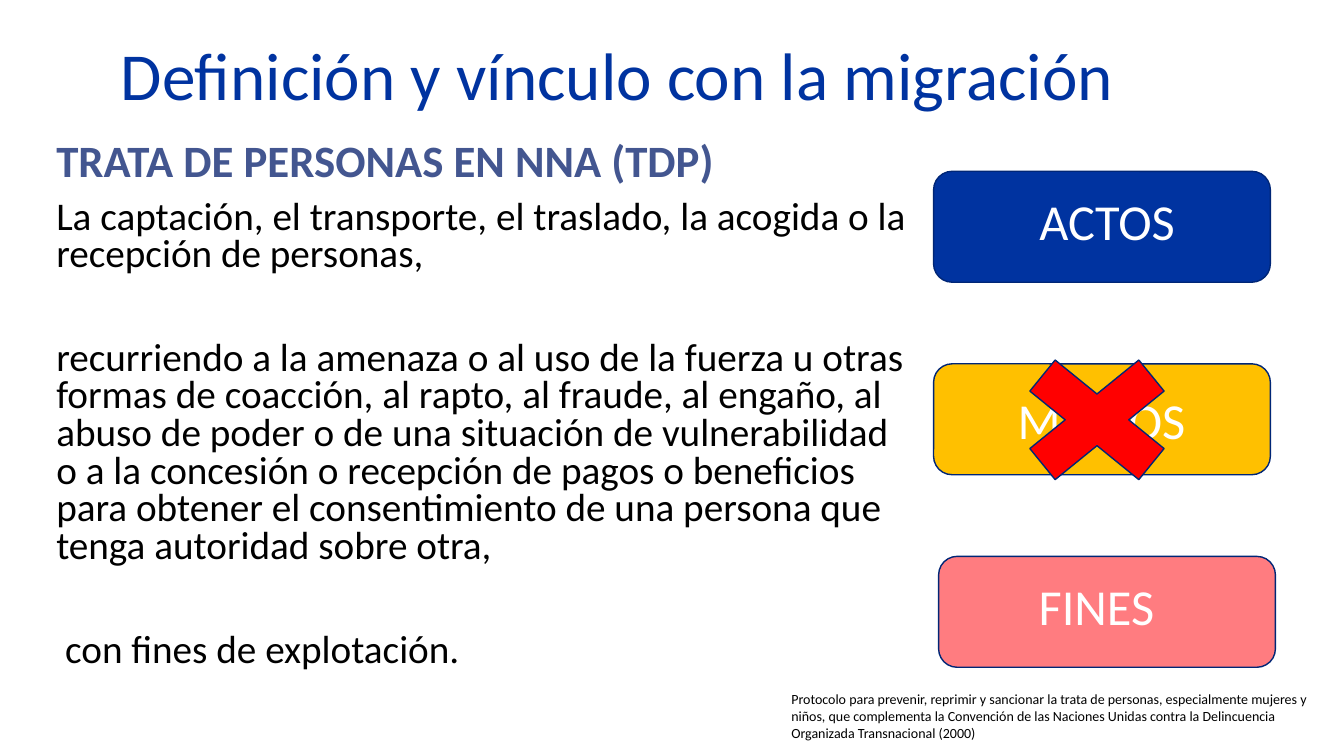
from dataclasses import dataclass

import pptx
import pptx.dml.color
import pptx.enum.shapes
import pptx.enum.text
import pptx.presentation
import pptx.shapes.autoshape
import pptx.slide
import pptx.util

Inches = pptx.util.Inches
Pt = pptx.util.Pt
RGBColor = pptx.dml.color.RGBColor
Shape = pptx.enum.shapes.MSO_SHAPE
Align = pptx.enum.text.PP_ALIGN
Anchor = pptx.enum.text.MSO_ANCHOR

FONT = "Calibri"
BLUE = RGBColor(0x00, 0x33, 0xA0)
DARK_BLUE = RGBColor(0x00, 0x26, 0x76)
SLATE = RGBColor(0x43, 0x56, 0x90)
AMBER = RGBColor(0xFF, 0xC0, 0x00)
PINK = RGBColor(0xFF, 0x7C, 0x80)
RED = RGBColor(0xFF, 0x00, 0x00)
BLACK = RGBColor(0x00, 0x00, 0x00)
WHITE = RGBColor(0xFF, 0xFF, 0xFF)


@dataclass(frozen=True)
class Box:
    left: float
    top: float
    width: float
    height: float

    def lengths(self) -> tuple[pptx.util.Length, ...]:
        return tuple(Inches(n) for n in (self.left, self.top, self.width, self.height))


@dataclass(frozen=True)
class Element:
    """One element of the definition: a coloured card and its label."""
    label: str
    fill: RGBColor
    card_left: float
    label_box: Box


@dataclass(frozen=True)
class Passage:
    text: str
    space_before: float = 0
    size: float = 28
    color: RGBColor = BLACK
    bold: bool = False


CARD_TOP, CARD_PITCH = 1.7, 1.91
ELEMENTS = (
    Element("ACTOS", BLUE, 9.26, Box(9.54, 1.84, 2.88, 0.71)),
    Element("MEDIOS", AMBER, 9.26, Box(9.54, 3.81, 2.77, 0.71)),
    Element("FINES", PINK, 9.31, Box(9.49, 5.66, 2.77, 0.71)),
)

SECTION_GAP = 47
DEFINITION = (
    Passage("TRATA DE PERSONAS EN NNA (TDP)", size=32, color=SLATE, bold=True),
    Passage("La captación, el transporte, el traslado, la acogida o la "
            "recepción de personas,", space_before=10),
    Passage("recurriendo a la amenaza o al uso de la fuerza u otras formas de "
            "coacción, al rapto, al fraude, al engaño, al abuso de poder o de una "
            "situación de vulnerabilidad o a la concesión o recepción de pagos o "
            "beneficios para obtener el consentimiento de una persona que tenga "
            "autoridad sobre otra,", space_before=SECTION_GAP),
    Passage(" con fines de explotación.", space_before=SECTION_GAP),
)
SOURCE_NOTE = (
    "Protocolo para prevenir, reprimir y sancionar la trata de personas, "
    "especialmente mujeres y niños, que complementa la Convención de las Naciones "
    "Unidas contra la Delincuencia Organizada Transnacional (2000)"
)


def add_text(slide: pptx.slide.Slide, box: Box, *passages: Passage,
             align: Align = Align.LEFT, anchor: Anchor = Anchor.TOP,
             line_spacing: float = 1.0) -> None:
    frame = slide.shapes.add_textbox(*box.lengths()).text_frame
    frame.word_wrap = True
    frame.vertical_anchor = anchor
    for index, passage in enumerate(passages):
        paragraph = frame.add_paragraph() if index else frame.paragraphs[0]
        paragraph.text = passage.text
        paragraph.alignment = align
        paragraph.line_spacing = line_spacing
        paragraph.space_before = Pt(passage.space_before)
        paragraph.font.name = FONT
        paragraph.font.size = Pt(passage.size)
        paragraph.font.bold = passage.bold
        paragraph.font.color.rgb = passage.color


def add_figure(slide: pptx.slide.Slide, kind: Shape, box: Box,
               fill: RGBColor) -> pptx.shapes.autoshape.Shape:
    shape = slide.shapes.add_shape(kind, *box.lengths())
    shape.shadow.inherit = False
    shape.fill.solid()
    shape.fill.fore_color.rgb = fill
    shape.line.color.rgb = DARK_BLUE
    shape.line.width = Pt(1)
    return shape


def main() -> None:
    presentation = pptx.Presentation()
    presentation.slide_width = Inches(13.33)
    presentation.slide_height = Inches(7.5)
    slide = presentation.slides.add_slide(presentation.slide_layouts[6])

    # Title and definition
    add_text(slide, Box(1.1, 0.18, 11.5, 1.21),
             Passage("Definición y vínculo con la migración", size=48, color=BLUE),
             anchor=Anchor.MIDDLE, line_spacing=0.9)
    add_text(slide, Box(0.46, 1.37, 8.69, 5.35), *DEFINITION, line_spacing=0.8)

    # Three elements of the definition
    for row, element in enumerate(ELEMENTS):
        card = Box(element.card_left, CARD_TOP + row * CARD_PITCH, 3.34, 1.1)
        add_figure(slide, Shape.ROUNDED_RECTANGLE, card, element.fill)
        add_text(slide, element.label_box,
                 Passage(element.label, size=36, color=WHITE), align=Align.CENTER)

    # Source note
    add_text(slide, Box(7.75, 6.8, 5.59, 0.61), Passage(SOURCE_NOTE, size=10))

    # Cross over the means
    add_figure(slide, Shape.MATH_MULTIPLY, Box(9.84, 3.32, 2.08, 1.69), RED)

    presentation.save("out.pptx")


if __name__ == "__main__":
    main()
